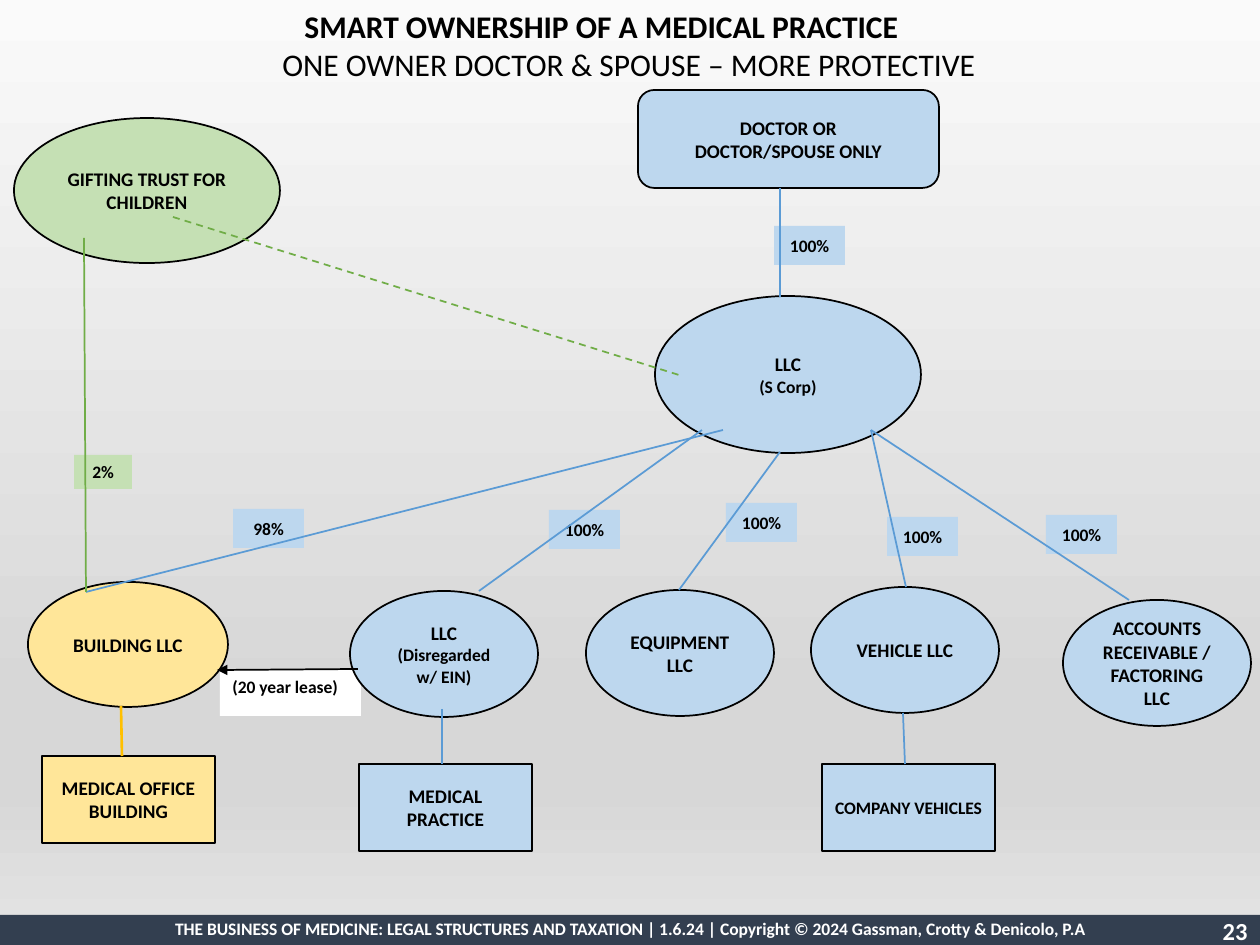
from lxml import etree
from pptx import Presentation
from pptx.dml.color import RGBColor
from pptx.enum.dml import MSO_LINE
from pptx.enum.shapes import MSO_CONNECTOR, MSO_SHAPE
from pptx.enum.text import MSO_ANCHOR, PP_ALIGN
from pptx.oxml.ns import qn
from pptx.util import Pt

PX = 914400 / 126
RECT, ROUND, OVAL = MSO_SHAPE.RECTANGLE, MSO_SHAPE.ROUNDED_RECTANGLE, MSO_SHAPE.OVAL
LINE, DASH = MSO_CONNECTOR.STRAIGHT, MSO_LINE.DASH
LEFT, MID, RIGHT = PP_ALIGN.LEFT, PP_ALIGN.CENTER, PP_ALIGN.RIGHT
TOP, CENTER = MSO_ANCHOR.TOP, MSO_ANCHOR.MIDDLE
BLACK, WHITE, NAVY = "000000", "FFFFFF", "333F50"
SKY, MINT, SAND = "BDD7EE", "C5E0B4", "FFE699"
BLUE, GREEN, GOLD = "5B9BD5", "70AD47", "FFC000"


def px(*nums):
    return [round(n * PX) for n in nums]


def shift(box, x, y):
    return box[0] + x, box[1] + y


def color(code):
    return RGBColor.from_string(code)


def write(frame, text, size=11, rest=None, tint=BLACK, bold=True, align=MID, anchor=CENTER):
    frame.word_wrap = True
    frame.vertical_anchor = anchor
    for i, words in enumerate(text.split("\n")):
        para = frame.paragraphs[0] if i == 0 else frame.add_paragraph()
        para.alignment = align
        run = para.add_run()
        run.text = words
        font = run.font
        font.name = "Calibri"
        font.size = Pt(rest if i and rest else size)
        font.bold = bold
        font.color.rgb = color(tint)


def label(slide, x, y, w, h, text, **style):
    box = slide.shapes.add_textbox(*px(x, y, w, h))
    write(box.text_frame, text, anchor=TOP, **style)


def block(slide, kind, x, y, w, h, fill, text="", edge=None, **style):
    shape = slide.shapes.add_shape(kind, *px(x, y, w, h))
    shape.shadow.inherit = False
    shape.fill.solid()
    shape.fill.fore_color.rgb = color(fill)
    if edge:
        shape.line.color.rgb = color(BLACK)
        shape.line.width = Pt(edge)
    else:
        shape.line.fill.background()
    if text:
        write(shape.text_frame, text, **style)


def link(slide, ends, tint, width=1, dash=None, arrow=False):
    line = slide.shapes.add_connector(LINE, *px(*ends))
    line.line.color.rgb = color(tint)
    line.line.width = Pt(width)
    if dash:
        line.line.dash_style = dash
    props = line.element.spPr
    if arrow:
        etree.SubElement(props.find(qn("a:ln")), qn("a:tailEnd"), type="triangle")
    etree.SubElement(props, qn("a:effectLst"))


def shade(slide):
    fill = slide.background.fill
    fill.gradient()
    fill.gradient_angle = 270
    stops = slide.element.find(".//" + qn("a:gsLst"))
    for stop in list(stops):
        stops.remove(stop)
    for pos, code in [(0, "FAFAFA"), (74, "D7D7D7"), (83, "D7D7D7"), (100, "E4E4E4")]:
        stop = etree.SubElement(stops, qn("a:gs"), pos=str(pos * 1000))
        etree.SubElement(stop, qn("a:srgbClr"), val=code)


def head(slide, box):
    label(slide, *shift(box, 292, 1), 674, 50, "SMART OWNERSHIP OF A MEDICAL PRACTICE",
          size=18, align=LEFT)
    label(slide, *shift(box, 234, 39), 790, 50, "ONE OWNER DOCTOR & SPOUSE – MORE PROTECTIVE",
          size=18, bold=False)


def foot(slide, box):
    block(slide, RECT, *box, NAVY)
    label(slide, *shift(box, 1031, -5), 229, 50, "23", size=14, tint=WHITE, align=RIGHT)
    label(slide, *shift(box, 88, -3), 1084, 34,
          "THE BUSINESS OF MEDICINE: LEGAL STRUCTURES AND TAXATION | 1.6.24 | "
          "Copyright © 2024 Gassman, Crotty & Denicolo, P.A", size=10, tint=WHITE)


def shares(slide, box):
    block(slide, RECT, *shift(box, 220, 580), 141, 46, WHITE, "(20 year lease)",
          size=10, align=LEFT, anchor=TOP)
    block(slide, RECT, *shift(box, 74, 365), 58, 34, MINT, "2%", size=10)
    for x, y, text in [(233, 419, "98%"), (1046, 425, "100%"), (887, 427, "100%"),
                       (549, 420, "100%"), (774, 136, "100%"), (726, 413, "100%")]:
        block(slide, RECT, *shift(box, x, y), 71, 39, SKY, text, size=10)


def owners(slide, box):
    block(slide, ROUND, *shift(box, 638, 0), 301, 98, SKY,
          "DOCTOR OR\nDOCTOR/SPOUSE ONLY", edge=1)
    block(slide, OVAL, *shift(box, 655, 206), 266, 157, SKY, "LLC\n(S Corp)", edge=1, rest=10)
    block(slide, OVAL, *shift(box, 14, 28), 266, 145, MINT,
          "GIFTING TRUST FOR CHILDREN", edge=1)


def units(slide, box):
    block(slide, OVAL, *shift(box, 28, 492), 200, 125, SAND, "BUILDING LLC", edge=1)
    for x, y, text in [(350, 501, "LLC\n(Disregarded w/ EIN)"), (586, 500, "EQUIPMENT LLC"),
                       (811, 497, "VEHICLE LLC"),
                       (1063, 510, "ACCOUNTS RECEIVABLE / FACTORING LLC")]:
        block(slide, OVAL, *shift(box, x, y), 188, 126, SKY, text, edge=1, rest=10)
    for x, y, fill, text, size in [(42, 666, SAND, "MEDICAL OFFICE BUILDING", 11),
                                   (359, 674, SKY, "MEDICAL PRACTICE", 11),
                                   (822, 674, SKY, "COMPANY VEHICLES", 10)]:
        block(slide, RECT, *shift(box, x, y), 173, 87, fill, text, edge=0.75, size=size)


def links(slide, box):
    def tie(x, y, u, v, tint=BLUE, **style):
        link(slide, shift(box, x, y) + shift(box, u, v), tint, **style)

    for ends in [(780, 98, 780, 207), (702, 340, 479, 501), (442, 619, 442, 674),
                 (679, 500, 780, 362), (871, 340, 906, 497), (871, 340, 1129, 510),
                 (86, 502, 723, 340), (903, 623, 905, 674)]:
        tie(*ends)
    tie(84, 148, 86, 502, GREEN)
    tie(173, 127, 679, 285, GREEN, dash=DASH)
    tie(121, 616, 122, 666, GOLD, width=1.5)
    tie(358, 579, 217, 580, BLACK, arrow=True)


def main():
    deck = Presentation()
    deck.slide_width, deck.slide_height = px(1260, 945)
    slide = deck.slides.add_slide(deck.slide_layouts[6])
    shade(slide)
    foot(slide, (0, 915, 1260, 30))
    body = (0, 90)
    for part in (shares, owners, units, links):
        part(slide, body)
    head(slide, (0, 0))
    deck.save("out.pptx")


if __name__ == "__main__":
    main()
